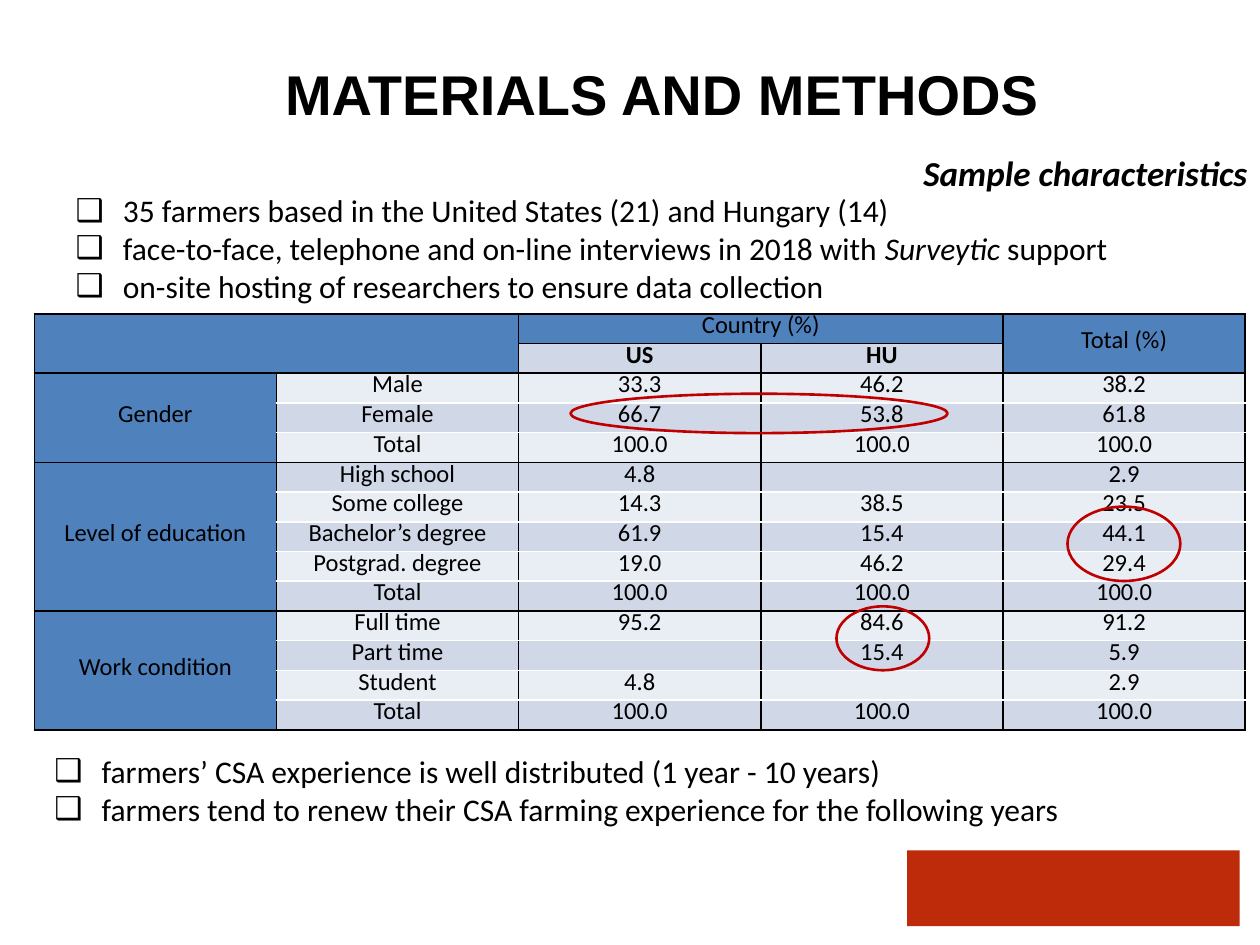
import pptx
import pptx.dml.color
import pptx.enum.shapes
import pptx.enum.text
import pptx.oxml
import pptx.oxml.ns
import pptx.util

Pt = pptx.util.Pt
ALIGN = pptx.enum.text.PP_ALIGN
ANCHOR = pptx.enum.text.MSO_ANCHOR
SHAPE = pptx.enum.shapes.MSO_SHAPE

BLACK, WHITE, RED, BRICK = "000000", "FFFFFF", "C00000", "BD2B0B"
HEADER, LIGHT, DARK = "4F81BD", "E9EDF4", "D0D8E8"

TITLE = "MATERIALS AND METHODS"
SUBTITLE = "Sample characteristics"
SAMPLE_POINTS = [
    [("35 farmers based in the United States (21) and Hungary (14)", False)],
    [("face-to-face, telephone and on-line interviews in 2018 with ", False),
     ("Surveytic", True), (" support", False)],
    [("on-site hosting of researchers to ensure data collection", False)],
]
EXPERIENCE_POINTS = [
    [("farmers’ CSA experience is well distributed (1 year - 10 years)", False)],
    [("farmers tend to renew their CSA farming experience for the following years", False)],
]
HEADINGS = [
    ("", "", "Country (%)", "", "Total (%)"),
    ("", "", "US", "HU", ""),
]
GROUPS = {
    "Gender": [
        ("Male", "33.3", "46.2", "38.2"),
        ("Female", "66.7", "53.8", "61.8"),
        ("Total", "100.0", "100.0", "100.0"),
    ],
    "Level of education": [
        ("High school", "4.8", "", "2.9"),
        ("Some college", "14.3", "38.5", "23.5"),
        ("Bachelor’s degree", "61.9", "15.4", "44.1"),
        ("Postgrad. degree", "19.0", "46.2", "29.4"),
        ("Total", "100.0", "100.0", "100.0"),
    ],
    "Work condition": [
        ("Full time", "95.2", "84.6", "91.2"),
        ("Part time", "", "15.4", "5.9"),
        ("Student", "4.8", "", "2.9"),
        ("Total", "100.0", "100.0", "100.0"),
    ],
}
HIGHLIGHTS = [(326, 225, 215.5, 22.5), (610, 289.5, 64.5, 42.5), (478, 346.5, 53, 36.5)]


def colour(value):
    return pptx.dml.color.RGBColor.from_string(value)


def place(shape, left, top, width, height):
    shape.left, shape.top, shape.width, shape.height = map(Pt, (left, top, width, height))


def style(run, size, font="Calibri", bold=False, italic=False):
    run.font.size, run.font.name = Pt(size), font
    run.font.bold, run.font.italic = bold, italic
    run.font.color.rgb = colour(BLACK)


def fill_list(holder, points, level, indent):
    frame = holder.text_frame
    frame.auto_size = pptx.enum.text.MSO_AUTO_SIZE.NONE
    frame.text = "\n".join("" for _ in points)
    for paragraph, pieces in zip(frame.paragraphs, points):
        paragraph.level = level
        paragraph.space_before = Pt(0)
        properties = paragraph._p.get_or_add_pPr()
        properties.set("marL", str(Pt(indent)))
        properties.set("indent", str(Pt(-27)))
        bullet = properties.makeelement(pptx.oxml.ns.qn("a:buChar"), {"char": "❑"})
        properties.append(bullet)
        for text, italic in pieces:
            run = paragraph.add_run()
            run.text = text
            style(run, 18, italic=italic)


def border(cell, side, value):
    cell._tc.get_or_add_tcPr().append(pptx.oxml.parse_xml(
        f'<a:ln{side} {pptx.oxml.ns.nsdecls("a")} w="12700"><a:solidFill>'
        f'<a:srgbClr val="{value}"/></a:solidFill></a:ln{side}>'))


def shrink_empty(paragraph):
    paragraph._p.append(paragraph._p.makeelement(
        pptx.oxml.ns.qn("a:endParaRPr"), {"sz": "1200"}))


def build_table(slide):
    rows, starts = list(HEADINGS), [0, 1]
    for name, lines in GROUPS.items():
        starts.append(len(rows))
        rows += [(name if i == 0 else "", *line) for i, line in enumerate(lines)]
    starts.append(len(rows))
    table = slide.shapes.add_table(
        len(rows), 5, Pt(19.6), Pt(179.3), Pt(692), Pt(17 * len(rows))).table
    table.first_row = table.horz_banding = False
    for row in table.rows:
        row.height = Pt(17)

    for r, values in enumerate(rows):
        for c, text in enumerate(values):
            cell = table.cell(r, c)
            cell.vertical_anchor = ANCHOR.MIDDLE
            cell.margin_left = cell.margin_right = Pt(5.4)
            cell.margin_top = cell.margin_bottom = 0
            border(cell, "L", BLACK)
            border(cell, "R", BLACK)
            for side, edge in (("T", r), ("B", r + 1)):
                border(cell, side, BLACK if c == 0 or edge in starts else WHITE)
            is_header = r == 0 or c == 0 or (r == 1 and c in (1, 4))
            cell.fill.solid()
            cell.fill.fore_color.rgb = colour(HEADER if is_header else DARK if r % 2 else LIGHT)
            cell.text_frame.text = text
            paragraph = cell.text_frame.paragraphs[0]
            paragraph.alignment, paragraph.line_spacing = ALIGN.CENTER, Pt(13)
            for run in paragraph.runs:
                style(run, 14, bold=r == 1)
            if not text:
                shrink_empty(paragraph)

    table.cell(0, 0).merge(table.cell(1, 1))
    table.cell(0, 2).merge(table.cell(0, 3))
    table.cell(0, 4).merge(table.cell(1, 4))
    for first, following in zip(starts[2:], starts[3:]):
        table.cell(first, 0).merge(table.cell(following - 1, 0))


def main():
    deck = pptx.Presentation()
    deck.slide_width, deck.slide_height = Pt(720), Pt(540)
    slide = deck.slides.add_slide(deck.slide_layouts[3])
    title, sample, experience = list(slide.placeholders)[:3]

    place(title, 82, 30.3, 592.5, 46)
    title.text_frame.text = TITLE
    title.text_frame.paragraphs[0].alignment = ALIGN.CENTER
    style(title.text_frame.paragraphs[0].runs[0], 32, "Arial", bold=True)

    place(sample, 0, 105.7, 698.4, 97)
    fill_list(sample, SAMPLE_POINTS, 1, 63)
    place(experience, -48.2, 426, 737.3, 51)
    fill_list(experience, EXPERIENCE_POINTS, 2, 99)

    subtitle = slide.shapes.add_textbox(0, Pt(83), Pt(720), Pt(31.5)).text_frame
    subtitle.word_wrap = True
    subtitle.text = SUBTITLE
    subtitle.paragraphs[0].alignment = ALIGN.RIGHT
    style(subtitle.paragraphs[0].runs[0], 20, bold=True, italic=True)

    build_table(slide)

    for box in HIGHLIGHTS:
        ring = slide.shapes.add_shape(SHAPE.OVAL, *map(Pt, box))
        ring.shadow.inherit = False
        ring.fill.background()
        ring.line.color.rgb, ring.line.width = colour(RED), Pt(1.5)

    block = slide.shapes.add_shape(SHAPE.RECTANGLE, Pt(518.4), Pt(486), Pt(190), Pt(43.2))
    block.shadow.inherit = False
    block.fill.solid()
    block.fill.fore_color.rgb = colour(BRICK)
    block.line.fill.background()

    deck.save("out.pptx")


if __name__ == "__main__":
    main()
